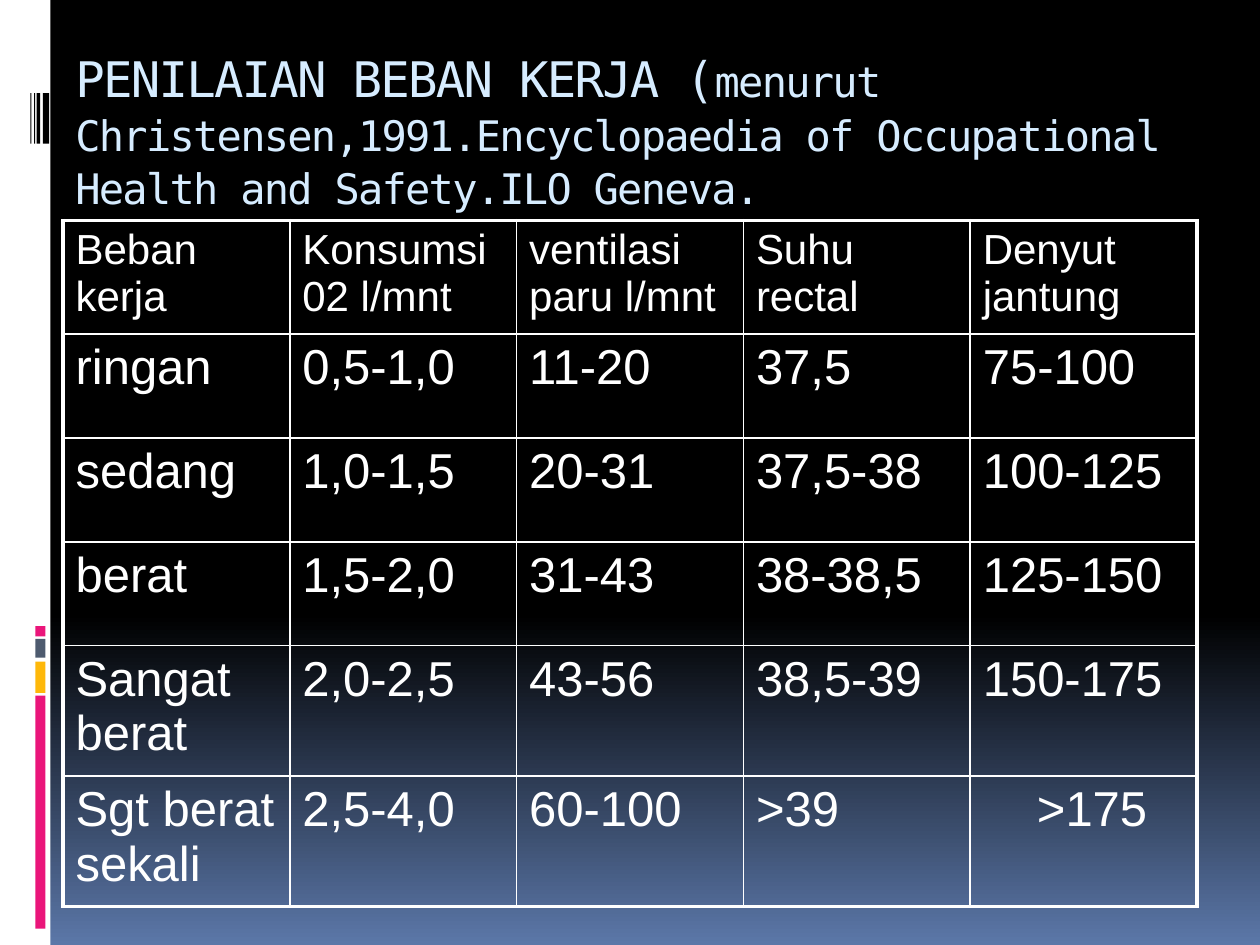
from typing import NamedTuple

from lxml import etree
from pptx import Presentation
from pptx.dml.color import RGBColor
from pptx.enum.shapes import MSO_SHAPE
from pptx.enum.text import MSO_ANCHOR
from pptx.oxml.ns import qn
from pptx.util import Inches, Pt

RECTANGLE = MSO_SHAPE.RECTANGLE
TOP = MSO_ANCHOR.TOP
WHITE, BLACK, PINK = "FFFFFF", "000000", "EA157A"
GOLD, SLATE, SKY, BLUE = "FEB80A", "4E5B6F", "D6ECFF", "5B77A8"
THIN, THICK = 1, 2.25


class Bar(NamedTuple):
    """A plain rectangle of the left edge, in inches."""

    left: float
    top: float
    width: float
    height: float
    color: str


class Style(NamedTuple):
    """The look of one run of text."""

    font: str
    size: float
    color: str
    spacing: float = 0


STRIPES = [(0.34, 0.05), (0.29, 0.03), (0.27, 0.01), (0.24, 0.01)]
BLOCKS = [(5.52, 1.85, PINK), (5.25, 0.25, GOLD), (5.07, 0.15, SLATE), (4.97, 0.08, PINK)]
BARS = [
    Bar(0, 0, 0.4, 7.5, WHITE),
    *(Bar(0.28, top, 0.08, height, color) for top, height, color in BLOCKS),
    *(Bar(left, 0.74, width, 0.4, BLACK) for left, width in STRIPES),
]
TITLE = [
    ("PENILAIAN BEBAN KERJA (", Style("DejaVu Sans Mono", 28, SKY, -1)),
    (
        "menurut Christensen,1991.Encyclopaedia of Occupational Health and Safety.ILO Geneva.",
        Style("DejaVu Sans Mono", 24, SKY, -1),
    ),
]
HEADER = Style("Arial", 24, WHITE)
BODY = Style("Arial", 28, WHITE)
WORKLOADS = [
    ["Beban kerja", "Konsumsi 02 l/mnt", "ventilasi paru l/mnt", "Suhu rectal", "Denyut jantung"],
    ["ringan", "0,5-1,0", "11-20", "37,5", "75-100"],
    ["sedang", "1,0-1,5", "20-31", "37,5-38", "100-125"],
    ["berat", "1,5-2,0", "31-43", "38-38,5", "125-150"],
    ["Sangat berat", "2,0-2,5", "43-56", "38,5-39", "150-175"],
    ["Sgt berat sekali", "2,5-4,0", "60-100", ">39", ">175"],
]
ROW_HEIGHT, COLUMN_WIDTH = 0.825, 1.8


def rgb(color: str) -> RGBColor:
    """Turn a hex string into a colour."""
    return RGBColor.from_string(color)


def add_span(para, text: str, style: Style) -> None:
    """Add one formatted run to a paragraph."""
    span = para.add_run()
    span.text = text
    for name, value in {"name": style.font, "size": Pt(style.size)}.items():
        setattr(span.font, name, value)
    span.font.color.rgb = rgb(style.color)
    if style.spacing:
        span._r.get_or_add_rPr().set("spc", str(round(style.spacing * 100)))


def paint_background(page) -> None:
    """Fade the page from black to blue at the bottom."""
    fill = page.background.fill
    fill.gradient()
    fill.gradient_angle = 270
    for stop, (position, color) in zip(fill.gradient_stops, [(0.65, BLACK), (1, BLUE)]):
        stop.position = position
        stop.color.rgb = rgb(color)


def add_bar(page, bar: Bar) -> None:
    """Draw one bar without outline."""
    shape = page.shapes.add_shape(RECTANGLE, *(Inches(length) for length in bar[:4]))
    shape.shadow.inherit = False
    shape.fill.solid()
    shape.fill.fore_color.rgb = rgb(bar.color)
    shape.line.fill.background()


def add_title(page) -> None:
    """Write the title in two sizes."""
    box = page.shapes.add_textbox(Inches(0.5), Inches(0.3), Inches(9), Inches(1.25))
    frame_format = {"word_wrap": True, "vertical_anchor": TOP, "margin_top": Inches(0.07)}
    for name, value in frame_format.items():
        setattr(box.text_frame, name, value)
    para = box.text_frame.paragraphs[0]
    para.line_spacing = 1.04
    for text, style in TITLE:
        add_span(para, text, style)


def set_borders(cell, widths: dict[str, float]) -> None:
    """Give the cell white borders of the given widths in points."""
    properties = cell._tc.get_or_add_tcPr()
    for index, (side, width) in enumerate(widths.items()):
        line = etree.Element(qn(f"a:{side}"), w=str(Pt(width)))
        fill = etree.SubElement(line, qn("a:solidFill"))
        etree.SubElement(fill, qn("a:srgbClr"), val=WHITE)
        properties.insert(index, line)


def add_workload_table(page) -> None:
    """Draw the workload table with a thick outer frame."""
    row_count, column_count = len(WORKLOADS), len(WORKLOADS[0])
    table = page.shapes.add_table(
        row_count,
        column_count,
        Inches(0.5),
        Inches(1.75),
        Inches(COLUMN_WIDTH * column_count),
        Inches(ROW_HEIGHT * row_count),
    ).table
    table.first_row = table.horz_banding = False
    for row, texts in enumerate(WORKLOADS):
        for column, text in enumerate(texts):
            cell = table.cell(row, column)
            cell.fill.background()
            cell.vertical_anchor = TOP
            add_span(cell.text_frame.paragraphs[0], text, BODY if row else HEADER)
            outer_sides = {
                "lnL": column == 0,
                "lnR": column == column_count - 1,
                "lnT": row == 0,
                "lnB": row == row_count - 1,
            }
            set_borders(cell, {side: THICK if outer else THIN for side, outer in outer_sides.items()})
    table.cell(row_count - 1, column_count - 1).margin_left = Inches(0.53)


def main() -> None:
    """Build and save the deck."""
    deck = Presentation()
    deck.slide_width, deck.slide_height = Inches(10), Inches(7.5)
    page = deck.slides.add_slide(deck.slide_layouts[6])
    paint_background(page)
    for bar in BARS:
        add_bar(page, bar)
    add_title(page)
    add_workload_table(page)
    deck.save("out.pptx")


if __name__ == "__main__":
    main()
